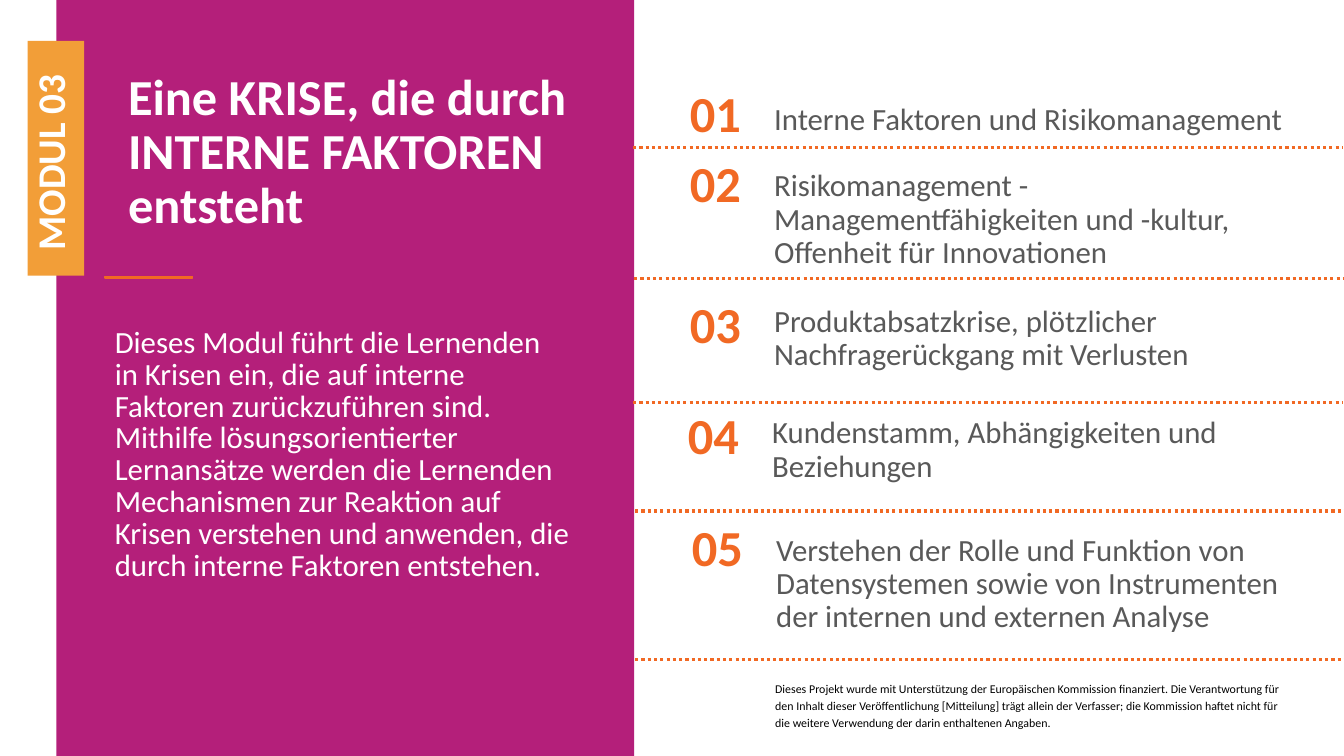
from lxml import etree
from pptx import Presentation, util as u
from pptx.dml.color import RGBColor
from pptx.enum import dml, shapes, text
from pptx.oxml.ns import qn

COLORS = {"panel": "B41F7A", "accent": "F16924", "tab": "F29E38",
          "topic": "595959", "white": "FFFFFF", "black": "000000"}
MIDDLE = text.MSO_ANCHOR.MIDDLE
CENTER = text.PP_ALIGN.CENTER

# number, topic, number left, number top, topic box, rule left, rule y
TOPICS = [
    ("01", "Interne Faktoren und Risikomanagement",
     6.64, 0.81, (7.58, 0.75, 5.75, 0.9), 6.28, 1.46),
    ("02", "Risikomanagement - Managementfähigkeiten und -kultur, "
     "Offenheit für Innovationen",
     6.64, 1.5, (7.58, 1.84, 5.48, 0.69), 6.29, 2.76),
    ("03", "Produktabsatzkrise, plötzlicher Nachfragerückgang mit Verlusten",
     6.64, 2.9, (7.58, 3.02, 5.2, 0.69), 6.28, 3.99),
    ("04", "Kundenstamm, Abhängigkeiten und Beziehungen",
     6.62, 4, (7.56, 4.02, 5.21, 0.9), 6.3, 5.07),
    ("05", "Verstehen der Rolle und Funktion von Datensystemen sowie von "
     "Instrumenten der internen und externen Analyse",
     6.66, 5.11, (7.6, 5.3, 5.2, 1), 6.3, 6.54),
]
INTRO = ("Dieses Modul führt die Lernenden in Krisen ein, die auf interne "
         "Faktoren zurückzuführen sind. Mithilfe lösungsorientierter "
         "Lernansätze werden die Lernenden Mechanismen zur Reaktion auf "
         "Krisen verstehen und anwenden, die durch interne Faktoren entstehen.")
DISCLAIMER = ("Dieses Projekt wurde mit Unterstützung der Europäischen "
              "Kommission finanziert. Die Verantwortung für den Inhalt dieser "
              "Veröffentlichung [Mitteilung] trägt allein der Verfasser; die "
              "Kommission haftet nicht für die weitere Verwendung der darin "
              "enthaltenen Angaben.")


def rgb(name):
    return RGBColor.from_string(COLORS[name])


class SlideBuilder:
    font = "Calibri"

    def __init__(self, slide):
        self.s = slide

    def set_text(self, sp, words, size, color, bold=False, frame=None,
                 para=None):
        """Fill a shape with one paragraph; frame and para hold format values."""
        tf = sp.text_frame
        tf.text = words
        p = tf.paragraphs[0]
        r = p.runs[0]
        formats = [
            (tf, {"word_wrap": True, "auto_size": text.MSO_AUTO_SIZE.NONE,
                  "vertical_anchor": text.MSO_ANCHOR.TOP, **(frame or {})}),
            (p, {"alignment": text.PP_ALIGN.LEFT, "line_spacing": 0.9,
                 "space_before": u.Pt(0), **(para or {})}),
            (r.font, {"name": self.font, "size": u.Pt(size), "bold": bold}),
        ]
        for target, values in formats:
            for key, value in values.items():
                setattr(target, key, value)
        r.font.color.rgb = rgb(color)

    def title(self, words, box, size, color):
        sp = self.s.shapes.title
        for key, value in zip(("left", "top", "width", "height"), box):
            setattr(sp, key, u.Inches(value))
        self.set_text(sp, words, size, color, bold=True)
        return sp

    def text(self, words, box, size, color, **style):
        sp = self.s.shapes.add_textbox(*map(u.Inches, box))
        self.set_text(sp, words, size, color, **style)

    def rect(self, box, color, line_width=0):
        sp = self.s.shapes.add_shape(shapes.MSO_SHAPE.RECTANGLE,
                                     *map(u.Inches, box))
        sp.shadow.inherit = False
        sp.fill.solid()
        sp.fill.fore_color.rgb = rgb(color)
        if line_width:
            sp.line.color.rgb = rgb(color)
            sp.line.width = u.Pt(line_width)
        else:
            sp.line.fill.background()
        return sp

    def dotted_rule(self, left, y, width, color):
        ends = map(u.Inches, (left, y, left + width, y))
        sp = self.s.shapes.add_connector(shapes.MSO_CONNECTOR.STRAIGHT, *ends)
        sp.line.color.rgb = rgb(color)
        sp.line.width = u.Pt(2.25)
        sp.line.dash_style = dml.MSO_LINE.ROUND_DOT
        etree.SubElement(sp.element.spPr, qn("a:effectLst"))


def main():
    prs = Presentation()
    prs.slide_width, prs.slide_height = u.Inches(13.33), u.Inches(7.5)
    b = SlideBuilder(prs.slides.add_slide(prs.slide_layouts[5]))

    panel = b.rect((0.56, 0, 5.73, 7.5), "panel")
    title = b.title("Eine KRISE, die durch INTERNE FAKTOREN entsteht",
                    (1.17, 0.66, 4.79, 2.21), 36, "white")
    title.element.addprevious(panel.element)  # keeps the panel behind the title
    b.rect((1.04, 2.74, 0.87, 0.02), "accent", line_width=1)
    b.text(INTRO, (1.04, 3.2, 4.71, 3.03), 22, "white",
           para={"line_spacing": u.Pt(22.8)})

    tab = b.rect((-0.61, 1.29, 2.33, 0.56), "tab")
    tab.rotation = 270
    b.set_text(tab, "MODUL 03", 28, "white", bold=True,
               frame={"vertical_anchor": MIDDLE, "margin_left": u.Inches(0.25)},
               para={"line_spacing": u.Pt(24.4)})

    middle = {"vertical_anchor": MIDDLE}
    for number, topic, left, top, box, rule_left, rule_y in TOPICS:
        b.text(number, (left, top, 0.91, 0.69), 36, "accent", bold=True,
               frame=middle, para={"alignment": CENTER})
        b.text(topic, box, 22, "topic", frame=middle)
        b.dotted_rule(rule_left, rule_y, 7.04, "accent")

    b.text(DISCLAIMER, (7.59, 6.68, 5.2, 0.6), 8.5, "black",
           para={"line_spacing": 1.2})
    prs.save("out.pptx")


if __name__ == "__main__":
    main()
